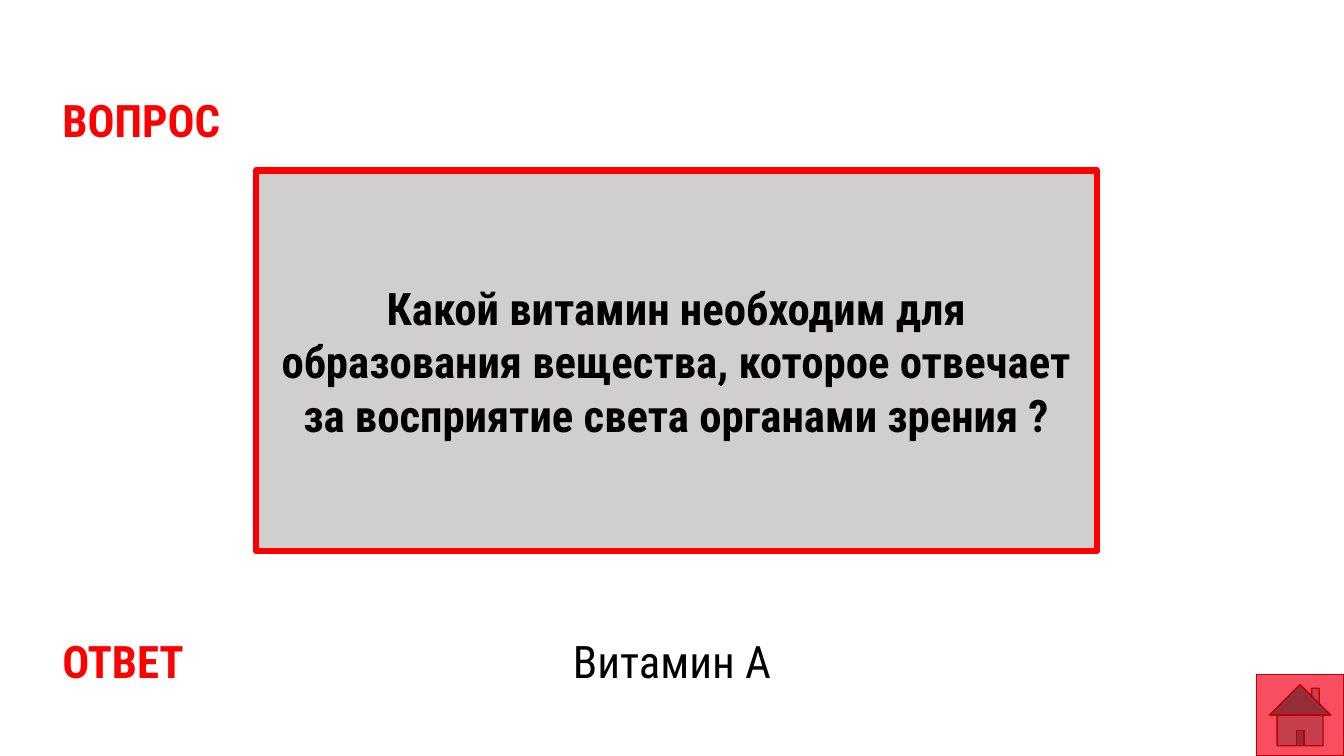
import pptx
import pptx.util
import pptx.dml.color
import pptx.enum.shapes
import pptx.enum.text

Inches = pptx.util.Inches
Color = pptx.dml.color.RGBColor.from_string
Shapes = pptx.enum.shapes.MSO_SHAPE
Align = pptx.enum.text.PP_ALIGN
Anchor = pptx.enum.text.MSO_ANCHOR

THEME = {
    "font": "Roboto Condensed", "size": 32,
    "accent": "FF0000", "ink": "000000", "panel": "D0CECE",
    "button": "F74F5F", "button_line": "C00000",
}
WIDTH, HEIGHT = 13.33, 7.5
MARGIN, LABEL_HEIGHT = 0.52, 0.64
QUESTION_TOP, ANSWER_TOP = 0.87, 6.24
ANSWER_WIDTH = 5.18
BUTTON_WIDTH, BUTTON_HEIGHT = 0.87, 0.81

presentation = pptx.Presentation()
presentation.slide_width, presentation.slide_height = Inches(WIDTH), Inches(HEIGHT)
slide = presentation.slides.add_slide(presentation.slide_layouts[6])


def write(shape, text, color, bold, alignment, anchor):
    frame = shape.text_frame
    frame.word_wrap = True
    frame.vertical_anchor = anchor
    paragraph = frame.paragraphs[0]
    paragraph.text = text
    paragraph.alignment = alignment
    font = paragraph.runs[0].font
    style = {"name": THEME["font"], "size": pptx.util.Pt(THEME["size"]), "bold": bold}
    for name, value in style.items():
        setattr(font, name, value)
    font.color.rgb = Color(THEME[color])


def add_box(preset, box, fill, line, line_width):
    shape = slide.shapes.add_shape(preset, *map(Inches, box))
    shape.shadow.inherit = False
    shape.fill.solid()
    shape.fill.fore_color.rgb = Color(THEME[fill])
    shape.line.color.rgb = Color(THEME[line])
    shape.line.width = pptx.util.Pt(line_width)
    return shape


# Question panel
panel = add_box(Shapes.RECTANGLE, (2.54, 1.69, 8.34, 3.78), "panel", "accent", 4.5)
write(panel, "Какой витамин необходим для образования вещества, "
      "которое отвечает за восприятие света органами зрения ?",
      "ink", True, Align.CENTER, Anchor.MIDDLE)

# Headings and the centred answer
labels = [
    ("ВОПРОС", MARGIN, QUESTION_TOP, ANSWER_WIDTH, "accent", True, Align.LEFT),
    ("ОТВЕТ", MARGIN, ANSWER_TOP, 1.65, "accent", True, Align.LEFT),
    ("Витамин А", (WIDTH - ANSWER_WIDTH) / 2, ANSWER_TOP, ANSWER_WIDTH,
     "ink", False, Align.CENTER),
]
for text, left, top, width, color, bold, alignment in labels:
    label = slide.shapes.add_textbox(*map(Inches, (left, top, width, LABEL_HEIGHT)))
    write(label, text, color, bold, alignment, Anchor.TOP)
    label.text_frame.auto_size = pptx.enum.text.MSO_AUTO_SIZE.SHAPE_TO_FIT_TEXT

# Home button in the bottom right corner
add_box(Shapes.ACTION_BUTTON_HOME,
        (WIDTH - BUTTON_WIDTH, HEIGHT - BUTTON_HEIGHT, BUTTON_WIDTH, BUTTON_HEIGHT),
        "button", "button_line", 1)

presentation.save("out.pptx")
